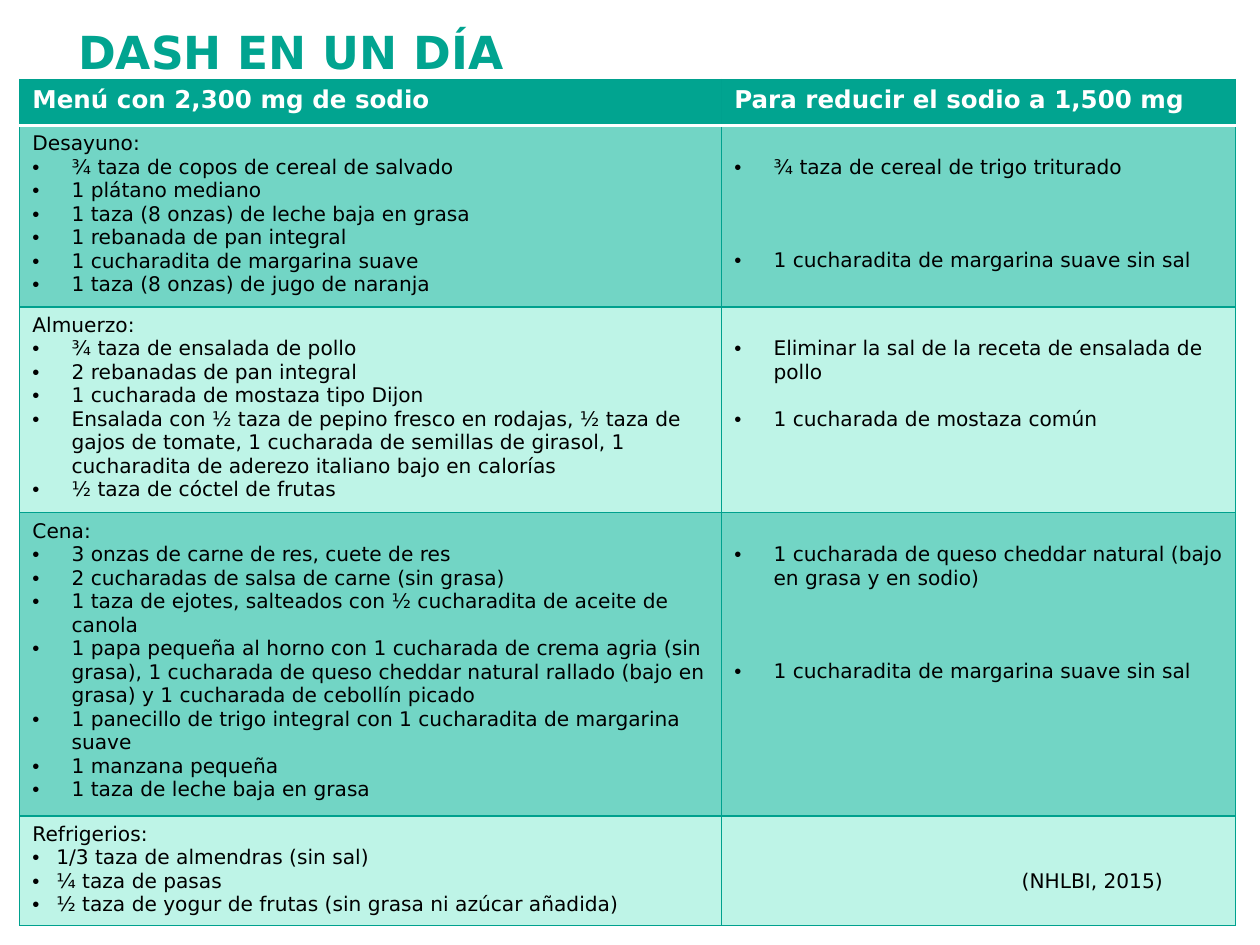
from lxml import etree
from pptx import Presentation
from pptx.dml.color import RGBColor
from pptx.enum.text import MSO_ANCHOR, PP_ALIGN
from pptx.oxml.ns import qn
from pptx.util import Cm, Pt

LEFT, RIGHT = PP_ALIGN.LEFT, PP_ALIGN.RIGHT
TOP = MSO_ANCHOR.TOP

TEAL = RGBColor(0x01, 0xA4, 0x90)
BORDER = RGBColor(0x00, 0xA1, 0x8E)
DARK_BAND = RGBColor(0x72, 0xD5, 0xC5)
LIGHT_BAND = RGBColor(0xBE, 0xF4, 0xE7)
WHITE = RGBColor(0xFF, 0xFF, 0xFF)
BLACK = RGBColor(0x00, 0x00, 0x00)

FONT = "DejaVu Sans"
TITLE_FORMAT = {"name": FONT, "size": Pt(26), "bold": True}
HEADER_FORMAT = {"name": FONT, "size": Pt(14), "bold": True}
BODY_FORMAT = {"name": FONT, "size": Pt(11.5), "bold": False}

LINE = Pt(13.4)  # height of one body line
CELL_TOP = Cm(0.13)
WIDE_INDENT, NARROW_INDENT = Cm(0.79), Cm(0.48)
COLUMN_WIDTHS = [Cm(14.15), Cm(10.36)]
HEADER_HEIGHT = Cm(0.93)
HEADERS = ["Menú con 2,300 mg de sodio", "Para reducir el sodio a 1,500 mg"]

# Each swap is (empty lines above it, text)
MEALS = [
    {
        "name": "Desayuno:", "height": Cm(3.66), "indent": WIDE_INDENT,
        "foods": [
            "¾ taza de copos de cereal de salvado",
            "1 plátano mediano",
            "1 taza (8 onzas) de leche baja en grasa",
            "1 rebanada de pan integral",
            "1 cucharadita de margarina suave",
            "1 taza (8 onzas) de jugo de naranja",
        ],
        "swaps": [(1, "¾ taza de cereal de trigo triturado"),
                  (3, "1 cucharadita de margarina suave sin sal")],
    },
    {
        "name": "Almuerzo:", "height": Cm(4.15), "indent": WIDE_INDENT,
        "foods": [
            "¾ taza de ensalada de pollo",
            "2 rebanadas de pan integral",
            "1 cucharada de mostaza tipo Dijon",
            "Ensalada con ½ taza de pepino fresco en rodajas, ½ taza de gajos "
            "de tomate, 1 cucharada de semillas de girasol, 1 cucharadita de "
            "aderezo italiano bajo en calorías",
            "½ taza de cóctel de frutas",
        ],
        "swaps": [(1, "Eliminar la sal de la receta de ensalada de pollo"),
                  (1, "1 cucharada de mostaza común")],
    },
    {
        "name": "Cena:", "height": Cm(6.11), "indent": WIDE_INDENT,
        "foods": [
            "3 onzas de carne de res, cuete de res",
            "2 cucharadas de salsa de carne (sin grasa)",
            "1 taza de ejotes, salteados con ½ cucharadita de aceite de canola",
            "1 papa pequeña al horno con 1 cucharada de crema agria (sin grasa), "
            "1 cucharada de queso cheddar natural rallado (bajo en grasa) y "
            "1 cucharada de cebollín picado",
            "1 panecillo de trigo integral con 1 cucharadita de margarina suave",
            "1 manzana pequeña",
            "1 taza de leche baja en grasa",
        ],
        "swaps": [(1, "1 cucharada de queso cheddar natural (bajo en grasa y en sodio)"),
                  (3, "1 cucharadita de margarina suave sin sal")],
    },
    {
        "name": "Refrigerios:", "height": Cm(2.2), "indent": NARROW_INDENT,
        "foods": [
            "1/3 taza de almendras (sin sal)",
            "¼ taza de pasas",
            "½ taza de yogur de frutas (sin grasa ni azúcar añadida)",
        ],
        "swaps": [],
    },
]
CITATION = "(NHLBI, 2015)"


def write(paragraph, text, font_format, color, align=LEFT):
    paragraph.alignment = align
    run = paragraph.add_run()
    run.text = text
    for attribute, value in font_format.items():
        setattr(run.font, attribute, value)
    run.font.color.rgb = color


def add_bullet(paragraph, indent):
    properties = paragraph._p.get_or_add_pPr()
    properties.set("marL", str(indent))
    properties.set("indent", str(-indent))
    etree.SubElement(properties, qn("a:buFont"), typeface="Arial")
    etree.SubElement(properties, qn("a:buChar"), char="•")


def set_borders(cell, white_side):
    """Draw thin teal sides, with a thicker white one under the header."""
    properties = cell._tc.get_or_add_tcPr()
    for position, side in enumerate(("lnL", "lnR", "lnT", "lnB")):
        is_white = side == white_side
        width = Pt(2) if is_white else Pt(0.75)
        line = etree.Element(qn(f"a:{side}"), w=str(width))
        fill = etree.SubElement(line, qn("a:solidFill"))
        etree.SubElement(fill, qn("a:srgbClr"), val=str(WHITE if is_white else BORDER))
        properties.insert(position, line)


def style_cell(cell, color, white_side=None):
    cell.fill.solid()
    cell.fill.fore_color.rgb = color
    cell.vertical_anchor = TOP
    cell.margin_top = CELL_TOP
    set_borders(cell, white_side)


def fill_foods(cell, meal):
    frame = cell.text_frame
    write(frame.paragraphs[0], meal["name"], BODY_FORMAT, BLACK)
    for food in meal["foods"]:
        paragraph = frame.add_paragraph()
        add_bullet(paragraph, meal["indent"])
        write(paragraph, food, BODY_FORMAT, BLACK)


def fill_swaps(cell, meal):
    frame = cell.text_frame
    for index, (gap, swap) in enumerate(meal["swaps"]):
        if index == 0:
            paragraph = frame.paragraphs[0]
            cell.margin_top = CELL_TOP + gap * LINE
        else:
            paragraph = frame.add_paragraph()
            paragraph.space_before = gap * LINE
        add_bullet(paragraph, meal["indent"])
        write(paragraph, swap, BODY_FORMAT, BLACK)


def add_title(slide):
    title = slide.shapes.title
    title.left, title.top, title.width, title.height = Cm(1.32), Cm(0.36), Cm(23.24), Cm(2.34)
    title.text_frame.vertical_anchor = TOP
    write(title.text_frame.paragraphs[0], "DASH EN UN DÍA", TITLE_FORMAT, TEAL)


def add_menu(slide):
    heights = [HEADER_HEIGHT] + [meal["height"] for meal in MEALS]
    menu = slide.shapes.add_table(len(heights), len(COLUMN_WIDTHS), Cm(0.4), Cm(1.6),
                                  sum(COLUMN_WIDTHS), sum(heights)).table
    menu.first_row = menu.horz_banding = False
    for column, width in zip(menu.columns, COLUMN_WIDTHS):
        column.width = width
    for row, height in zip(menu.rows, heights):
        row.height = height

    # Header row
    for cell, header in zip(menu.rows[0].cells, HEADERS):
        style_cell(cell, TEAL, "lnB")
        write(cell.text_frame.paragraphs[0], header, HEADER_FORMAT, WHITE)

    # One row for each meal
    for number, meal in enumerate(MEALS, start=1):
        foods, swaps = menu.rows[number].cells
        for cell in (foods, swaps):
            style_cell(cell, DARK_BAND if number % 2 else LIGHT_BAND,
                       "lnT" if number == 1 else None)
        fill_foods(foods, meal)
        fill_swaps(swaps, meal)

    # Source, on the third line of the last cell
    source = menu.cell(len(MEALS), 1)
    source.margin_top = CELL_TOP + 2 * LINE
    source.margin_right = Cm(1.47)
    write(source.text_frame.paragraphs[0], CITATION, BODY_FORMAT, BLACK, RIGHT)


def main():
    presentation = Presentation()
    presentation.slide_width, presentation.slide_height = Cm(25.4), Cm(19.05)
    slide = presentation.slides.add_slide(presentation.slide_layouts[5])
    add_title(slide)
    add_menu(slide)
    presentation.save("out.pptx")


if __name__ == "__main__":
    main()
